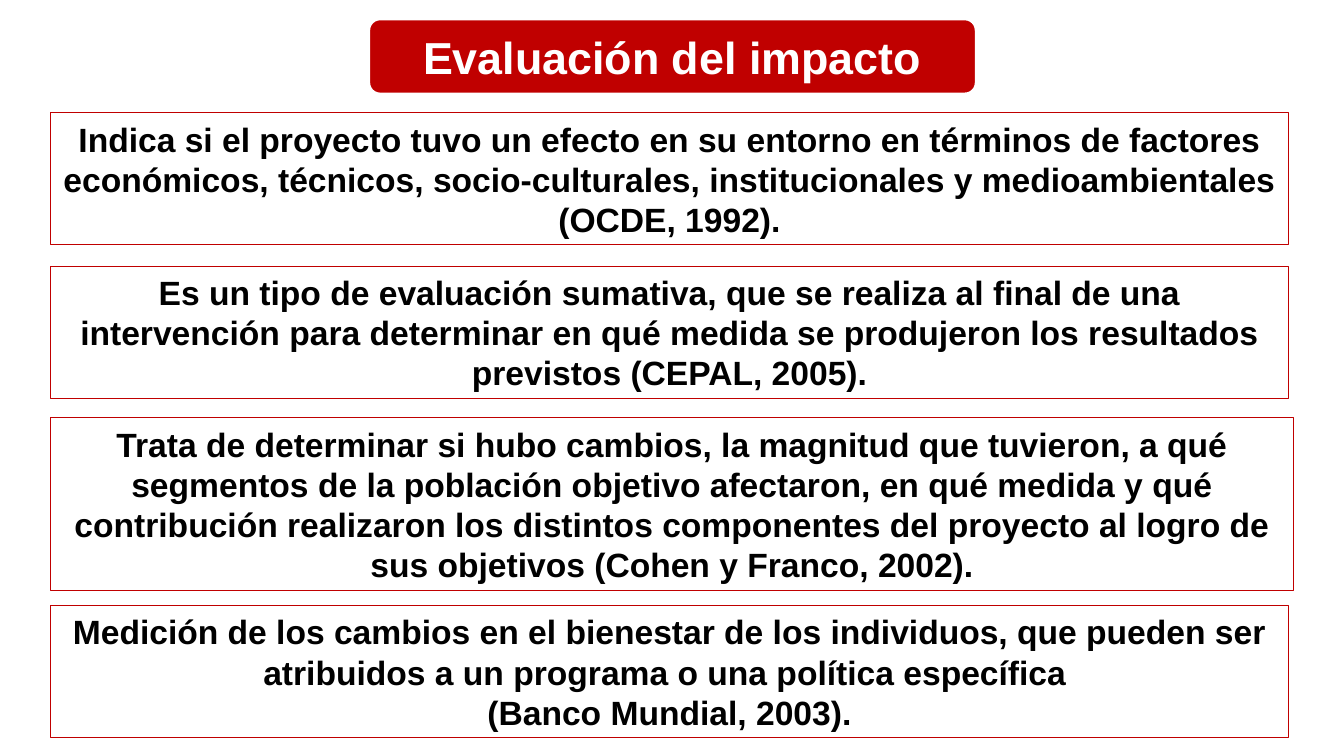
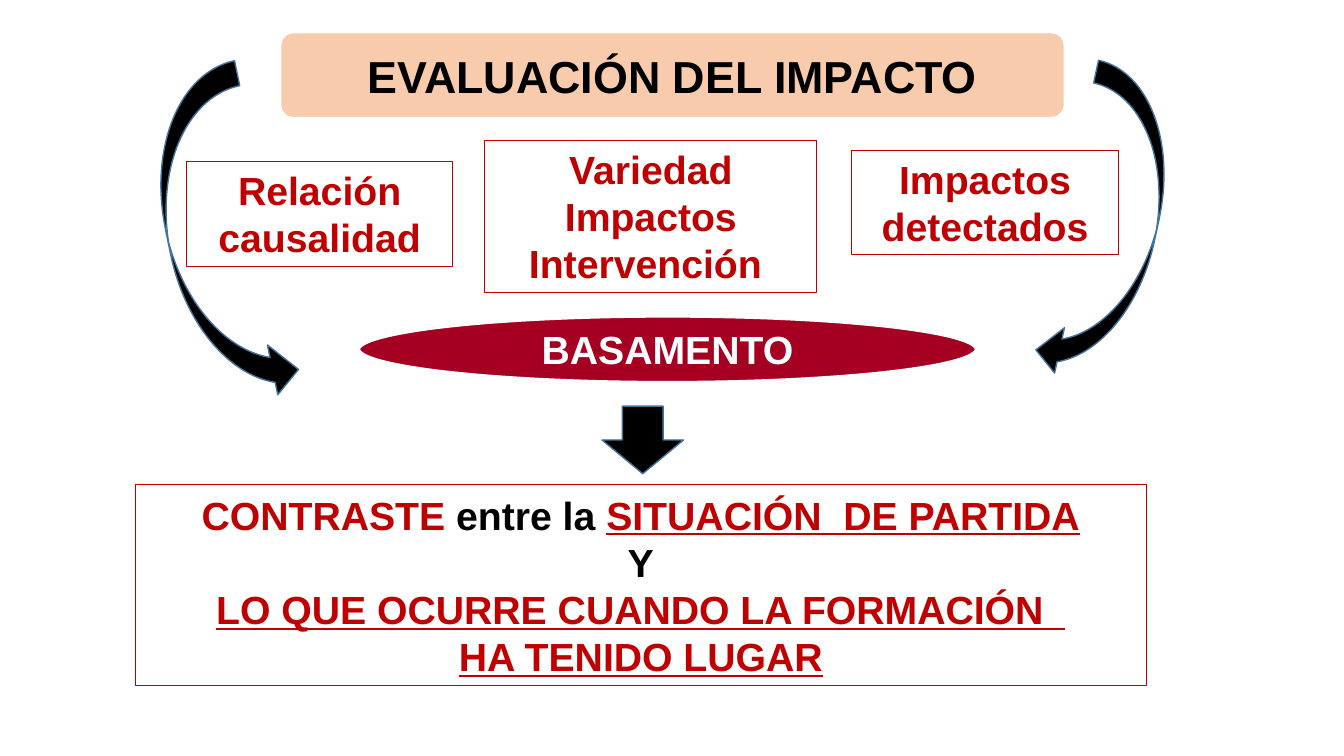
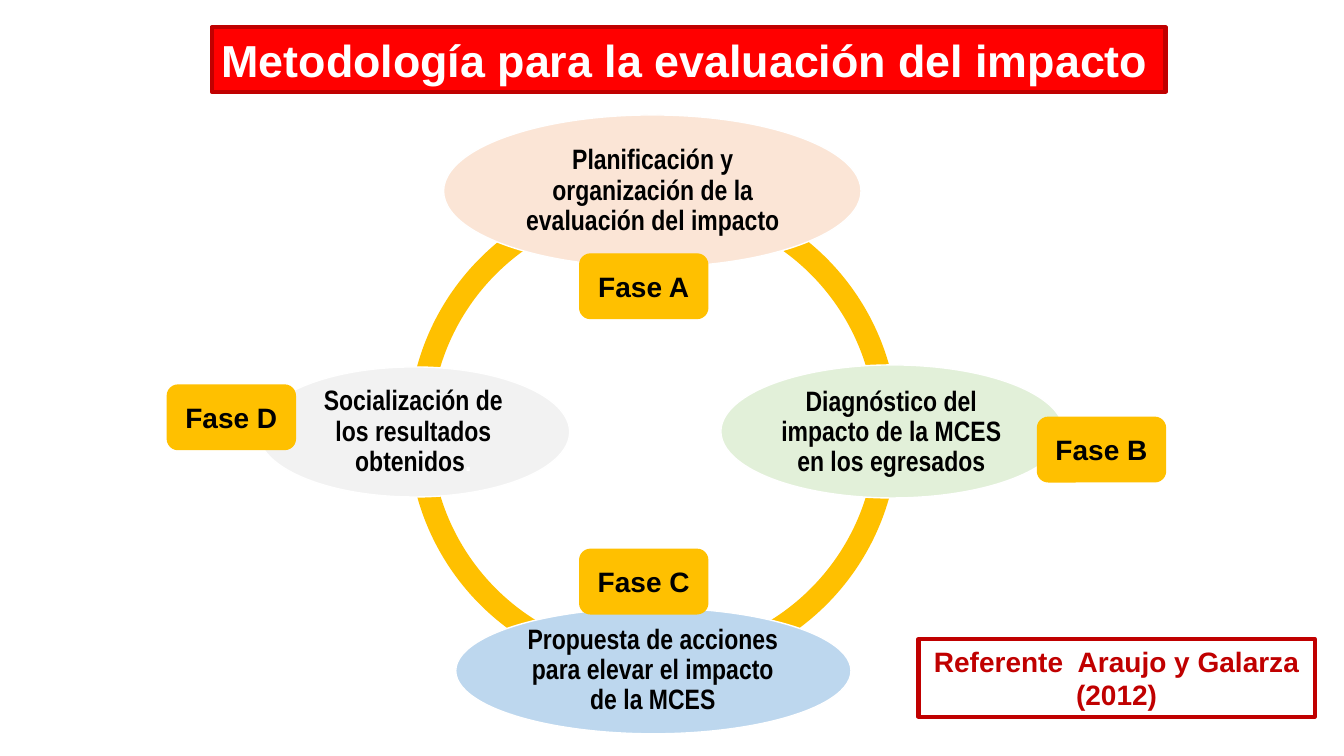
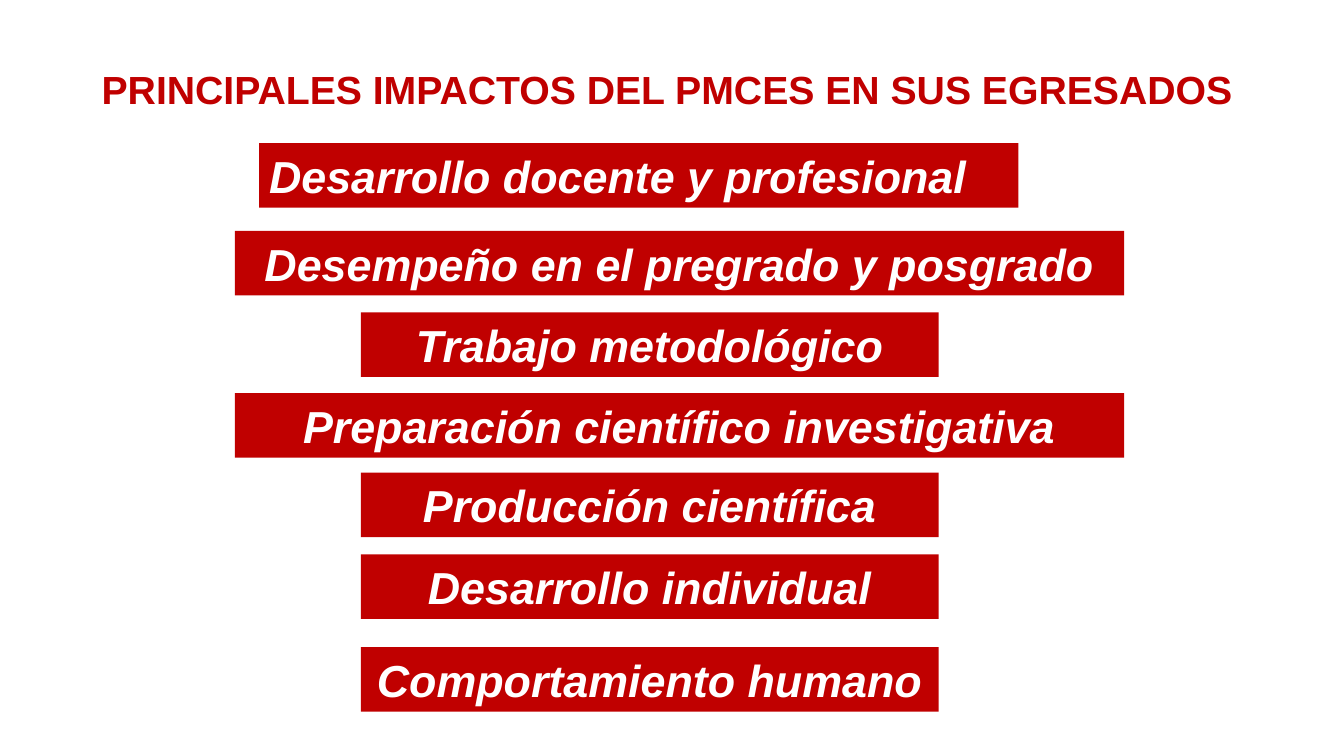
from pptx import Presentation
from pptx import util as u
from pptx.dml import color
from pptx.enum import shapes, text

HUES = {
    "red": "C00000", "bright": "FF0000", "wine": "A50021", "gold": "FFC000",
    "peach": "F8CBAD", "cream": "FBE5D6", "green": "E2F0D9", "sky": "BDD7EE",
    "grey": "F2F2F2", "steel": "43739E", "black": "000000", "white": "FFFFFF",
}
KIND = shapes.MSO_SHAPE
LEFT, MID = text.PP_ALIGN.LEFT, text.PP_ALIGN.CENTER


def hue(name):
    """Return the colour of that name."""
    return color.RGBColor.from_string(HUES[name])


def draw(slide, kind, box, fill=None, line=None, width=1):
    """Place a preset shape in a box of inches."""
    shape = slide.shapes.add_shape(kind, *map(u.Inches, box))
    shape.shadow.inherit = False
    if fill:
        shape.fill.solid()
        shape.fill.fore_color.rgb = hue(fill)
    else:
        shape.fill.background()
    if line:
        shape.line.color.rgb = hue(line)
        shape.line.width = u.Pt(width)
    else:
        shape.line.fill.background()
    return shape


def write(shape, rows, size, ink="black", align=MID, face="Arial",
          italic=False, inset=None, space=None):
    """Write rows, each a string or a list of (words, ink, underline)."""
    frame = shape.text_frame
    frame.word_wrap = True
    frame.vertical_anchor = text.MSO_ANCHOR.MIDDLE
    if inset is not None:
        frame.margin_left = frame.margin_right = u.Inches(inset)
        frame.margin_top = frame.margin_bottom = u.Inches(inset)
    for i, row in enumerate(rows):
        para = frame.add_paragraph() if i else frame.paragraphs[0]
        para.alignment = align
        if space:
            para.line_spacing = space
        parts = [(row, ink, False)] if isinstance(row, str) else row
        for words, tone, under in parts:
            run = para.add_run()
            run.text = words
            font = run.font
            font.name, font.size = face, u.Pt(size)
            font.bold, font.italic, font.underline = True, italic, under
            font.color.rgb = hue(tone)


def head(slide, box, words, fill, ink):
    """Draw a rounded title band."""
    band = draw(slide, KIND.ROUNDED_RECTANGLE, box, fill, "white", 4.5)
    write(band, [words], 32, ink)


def frame(slide, box, rows, size, ink="red", width=0.75):
    """Draw a red outlined box of text."""
    write(draw(slide, KIND.RECTANGLE, box, None, "red", width), rows, size, ink)


def phase(slide, oval, fill, area, row, tag, spot):
    """Draw one phase of the cycle: oval, text and tag."""
    draw(slide, KIND.OVAL, oval, fill, "white")
    note = slide.shapes.add_textbox(*map(u.Inches, area))
    write(note, [row], 20, face="Arial Narrow", inset=0.03, space=0.9)
    label = draw(slide, KIND.ROUNDED_RECTANGLE, (*spot, 1.27, 0.64), "gold", "gold")
    write(label, [tag], 20)


def ring(slide, box):
    """Draw a ring of four quarter arcs."""
    for start in range(0, 360, 90):
        arc = draw(slide, KIND.BLOCK_ARC, box, "gold")
        turns = (start * 0.6, (start + 90) % 360 * 0.6, 0.046)
        for i, value in enumerate(turns):
            arc.adjustments[i] = value


def define(slide):
    """Build the slide of definitions."""
    head(slide, (3.64, 0.17, 6.06, 0.78), "Evaluación del impacto", "red", "white")
    items = [
        (1.12, 12.28, 1.31, ["Indica si el proyecto tuvo un efecto en su entorno en términos de factores económicos, técnicos, socio-culturales, institucionales y medioambientales (OCDE, 1992)."]),
        (2.64, 12.28, 1.31, ["Es un tipo de evaluación sumativa, que se realiza al final de una intervención para determinar en qué medida se produjeron los resultados previstos (CEPAL, 2005)."]),
        (4.14, 12.33, 1.72, ["Trata de determinar si hubo cambios, la magnitud que tuvieron, a qué segmentos de la población objetivo afectaron, en qué medida y qué contribución realizaron los distintos componentes del proyecto al logro de sus objetivos (Cohen y Franco, 2002)."]),
        (6.01, 12.28, 1.31, ["Medición de los cambios en el bienestar de los individuos, que pueden ser atribuidos a un programa o una política específica ", "(Banco Mundial, 2003)."]),
    ]
    for top, wide, high, rows in items:
        frame(slide, (0.5, top, wide, high), rows, 24, "black")


def base(slide):
    """Build the slide of the basis of the evaluation."""
    head(slide, (2.76, 0.3, 7.82, 0.89), "EVALUACIÓN DEL IMPACTO", "peach", "black")
    arrows = [
        (KIND.CURVED_RIGHT_ARROW, (1.67, 0.67, 1.01, 3.38), -11.7),
        (KIND.CURVED_LEFT_ARROW, (10.55, 0.66, 0.92, 3.17), 12.2),
        (KIND.DOWN_ARROW, (5.97, 4.03, 0.81, 0.67), 0),
    ]
    for kind, box, turn in arrows:
        draw(slide, kind, box, "black", "steel").rotation = turn
    oval = draw(slide, KIND.OVAL, (3.54, 3.12, 6.16, 0.69), "wine", "white", 4.5)
    write(oval, ["BASAMENTO"], 28, "white")
    for box, words in [
        ((1.85, 1.6, 2.64, 1.04), "Relación causalidad"),
        ((4.81, 1.39, 3.29, 1.51), "Variedad Impactos Intervención "),
        ((8.45, 1.49, 2.64, 1.04), "Impactos detectados"),
    ]:
        frame(slide, box, [words], 28)
    frame(slide, (1.34, 4.81, 10.03, 1.99), [
        [("CONTRASTE ", "red", False), ("entre la ", "black", False),
         ("SITUACIÓN  DE PARTIDA", "red", True)],
        [("Y", "black", False)],
        [("LO QUE OCURRE CUANDO LA FORMACIÓN  ", "red", True)],
        [("HA TENIDO LUGAR", "red", True)],
    ], 28)


def cycle(slide):
    """Build the slide of the four phases."""
    band = draw(slide, KIND.RECTANGLE, (2.1, 0.27, 9.46, 0.64), "bright", "red", 3)
    write(band, ["Metodología para la evaluación del impacto"], 32, "white", LEFT)
    ring(slide, (4.05, 1.85, 4.86, 4.86))
    phase(slide, (4.4, 1.14, 4.14, 1.51), "cream", (5.01, 1.36, 2.93, 1.07),
          "Planificación y organización de la evaluación del impacto",
          "Fase A", (5.75, 2.52))
    phase(slide, (7.15, 3.62, 3.4, 1.32), "green", (7.64, 3.82, 2.4, 0.94),
          "Diagnóstico del impacto de la MCES en los egresados",
          "Fase B", (10.29, 4.14))
    phase(slide, (4.52, 6.03, 3.92, 1.25), "sky", (5.09, 6.21, 2.77, 0.88),
          "Propuesta de acciones para elevar el impacto de la MCES",
          "Fase C", (5.75, 5.45))
    phase(slide, (2.56, 3.64, 3.09, 1.29), "grey", (3.01, 3.83, 2.18, 0.91),
          [("Socialización de los resultados obtenidos", "black", False),
           (".", "white", False)],
          "Fase D", (1.66, 3.82))
    frame(slide, (9.11, 6.34, 3.93, 0.77),
          ["Referente  Araujo y Galarza (2012)"], 20, width=3)


def gains(slide):
    """Build the slide of the main impacts."""
    title = slide.shapes.add_textbox(*map(u.Inches, (0.91, 0.19, 11.82, 1.45)))
    write(title, ["PRINCIPALES IMPACTOS DEL PMCES EN SUS EGRESADOS"], 28, "red",
          LEFT, space=0.9)
    short, long = (3.58, 5.73), (2.33, 8.82)
    for top, (left, wide), words, align in [
        (1.42, (2.57, 7.53), "Desarrollo docente y profesional", LEFT),
        (2.29, long, "Desempeño en el pregrado y posgrado", MID),
        (3.1, short, "Trabajo metodológico", MID),
        (3.9, long, "Preparación científico investigativa", MID),
        (4.69, short, "Producción científica", MID),
        (5.5, short, "Desarrollo individual", MID),
        (6.42, short, "Comportamiento humano", MID),
    ]:
        bar = draw(slide, KIND.RECTANGLE, (left, top, wide, 0.64), "red")
        write(bar, [words], 32, "white", align, italic=True)


def main():
    """Build and save the deck."""
    deck = Presentation()
    deck.slide_width, deck.slide_height = u.Inches(13.33), u.Inches(7.5)
    for build in (define, base, cycle, gains):
        build(deck.slides.add_slide(deck.slide_layouts[6]))
    deck.save("out.pptx")


if __name__ == "__main__":
    main()
